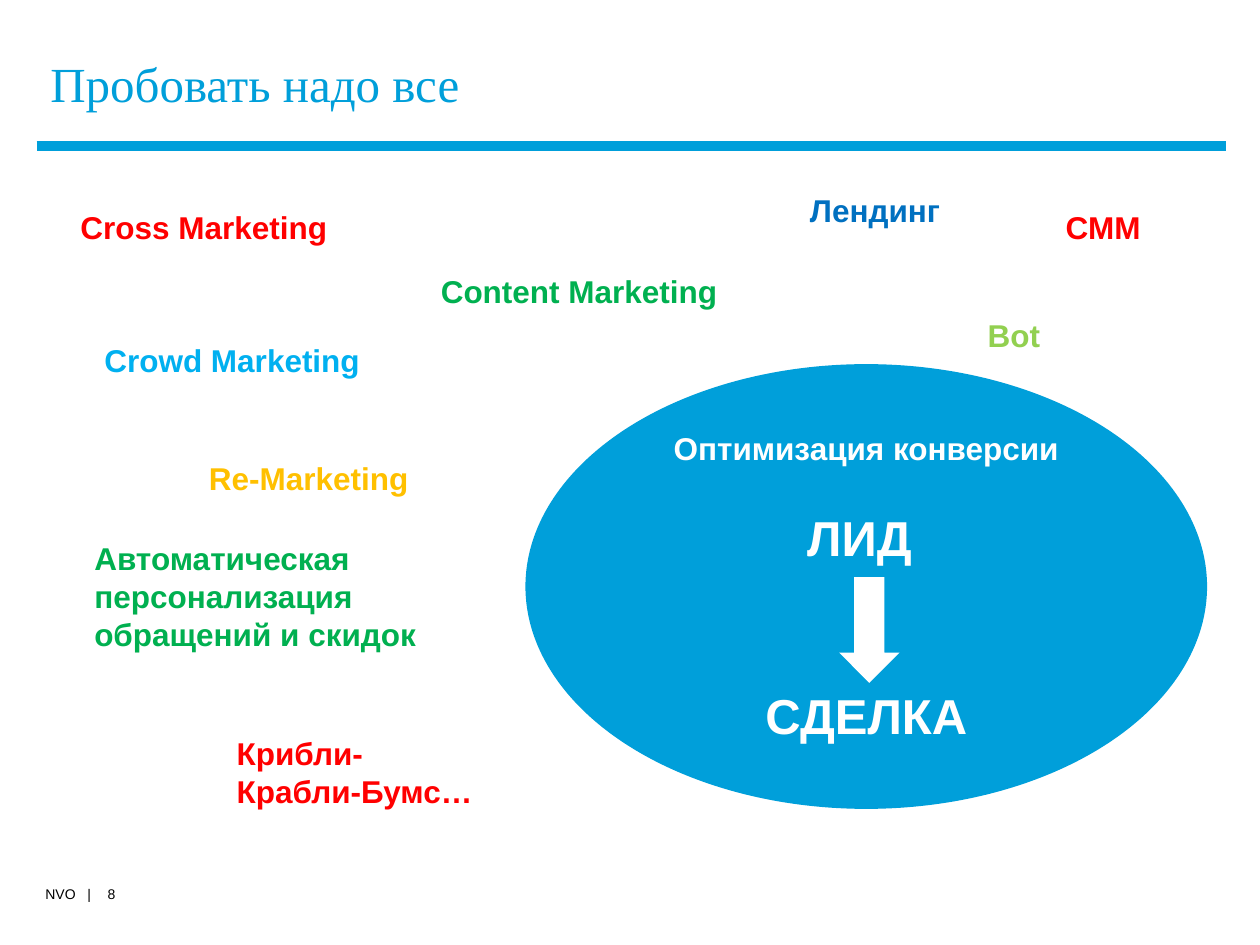
from lxml.etree import SubElement
from pptx import Presentation
from pptx.dml.color import RGBColor
from pptx.enum.shapes import MSO_CONNECTOR, MSO_SHAPE
from pptx.enum.text import MSO_ANCHOR, MSO_AUTO_SIZE, PP_ALIGN
from pptx.oxml.ns import qn
from pptx.util import Emu, Pt

EMU_PER_PX = 9144
BLUE, WHITE, BLACK = "009FDA", "FFFFFF", "000000"
RED, GREEN = "FF0000", "00B050"


def px(length):
    return Emu(length * EMU_PER_PX)


def color(value):
    return RGBColor.from_string(value)


def set_values(target, values):
    for name, value in values.items():
        setattr(target, name, value)


class SlideBuilder:
    label_font = {"name": "Arial", "size": Pt(18), "bold": True}
    footer_font = {"name": "Arial", "size": Pt(8), "bold": False}
    title_font = {"name": "Times New Roman", "size": Pt(28), "bold": False}

    def __init__(self, slide):
        self.slide = slide

    def fill_paragraph(self, paragraph, text, font, fill, **layout):
        paragraph.text = text
        set_values(paragraph, layout)
        set_values(paragraph.font, font)
        paragraph.font.color.rgb = color(fill)

    def title(self, text, left, top, width, height):
        shape = self.slide.shapes.title
        set_values(shape, {"left": px(left), "top": px(top),
                           "width": px(width), "height": px(height)})
        set_values(shape.text_frame, {"auto_size": MSO_AUTO_SIZE.NONE,
                                      "vertical_anchor": MSO_ANCHOR.MIDDLE})
        self.fill_paragraph(shape.text_frame.paragraphs[0], text, self.title_font, BLUE,
                            alignment=PP_ALIGN.LEFT, line_spacing=0.9)

    def rule(self, left, right, y, weight):
        line = self.slide.shapes.add_connector(
            MSO_CONNECTOR.STRAIGHT, px(left), px(y), px(right), px(y))
        line.line.color.rgb = color(BLUE)
        line.line.width = Pt(weight)
        SubElement(line._element.spPr, qn("a:effectLst"))

    def text(self, text, left, top, width, height, fill, font=None, frame=None, **layout):
        box = self.slide.shapes.add_textbox(px(left), px(top), px(width), px(height))
        set_values(box.text_frame, {"word_wrap": True, **(frame or {})})
        self.fill_paragraph(box.text_frame.paragraphs[0], text,
                            font or self.label_font, fill, **layout)

    def shape(self, kind, left, top, width, height, fill):
        shape = self.slide.shapes.add_shape(kind, px(left), px(top), px(width), px(height))
        shape.shadow.inherit = False
        shape.fill.solid()
        shape.fill.fore_color.rgb = color(fill)
        shape.line.fill.background()
        return shape

    def ellipse(self, lines, left, top, width, height):
        frame = self.shape(MSO_SHAPE.OVAL, left, top, width, height, BLUE).text_frame
        set_values(frame, {"word_wrap": True, "vertical_anchor": MSO_ANCHOR.MIDDLE})
        for index, (text, size, space) in enumerate(lines):
            paragraph = frame.add_paragraph() if index else frame.paragraphs[0]
            self.fill_paragraph(paragraph, text, {**self.label_font, "size": Pt(size)}, WHITE,
                                alignment=PP_ALIGN.CENTER, space_before=Pt(space))


def main():
    presentation = Presentation()
    set_values(presentation, {"slide_width": px(1000), "slide_height": px(750)})
    slide = presentation.slides.add_slide(presentation.slide_layouts[5])
    builder = SlideBuilder(slide)

    builder.rule(29, 973, 116, 6)
    builder.title("Пробовать надо все", 30, 25, 945, 87)

    flush = {"margin_left": 0, "margin_right": 0, "margin_top": 0, "margin_bottom": 0}
    builder.text("NVO   |", 36, 703, 74, 30, BLACK, builder.footer_font, flush)
    number_frame = {"margin_left": 0, "margin_right": px(8)}
    builder.text("8", 65, 698, 55, 28, BLACK, builder.footer_font, number_frame,
                 alignment=PP_ALIGN.CENTER)

    labels = [
        ("Content Marketing", 340, 211, 242, 40, GREEN),
        ("Cross Marketing", 54, 160, 218, 40, RED),
        ("Re-Marketing", 156, 359, 211, 71, "FFC000"),
        ("Автоматическая персонализация обращений и скидок", 65, 423, 311, 131, GREEN),
        ("Лендинг", 633, 147, 213, 40, "0070C0"),
        ("СММ", 836, 160, 92, 40, RED),
        ("Bot", 774, 246, 89, 40, "92D050"),
        ("Crowd Marketing", 73, 266, 225, 40, "00B0F0"),
        ("Крибли-Крабли-Бумс…", 178, 578, 211, 71, RED),
    ]
    for label in labels:
        builder.text(*label)

    stages = [("Оптимизация конверсии", 18, 0), ("ЛИД ", 28, 23), ("СДЕЛКА", 28, 68)]
    builder.ellipse(stages, 417, 289, 541, 353)
    builder.shape(MSO_SHAPE.DOWN_ARROW, 666, 458, 48, 84, WHITE)

    presentation.save("out.pptx")


if __name__ == "__main__":
    main()
